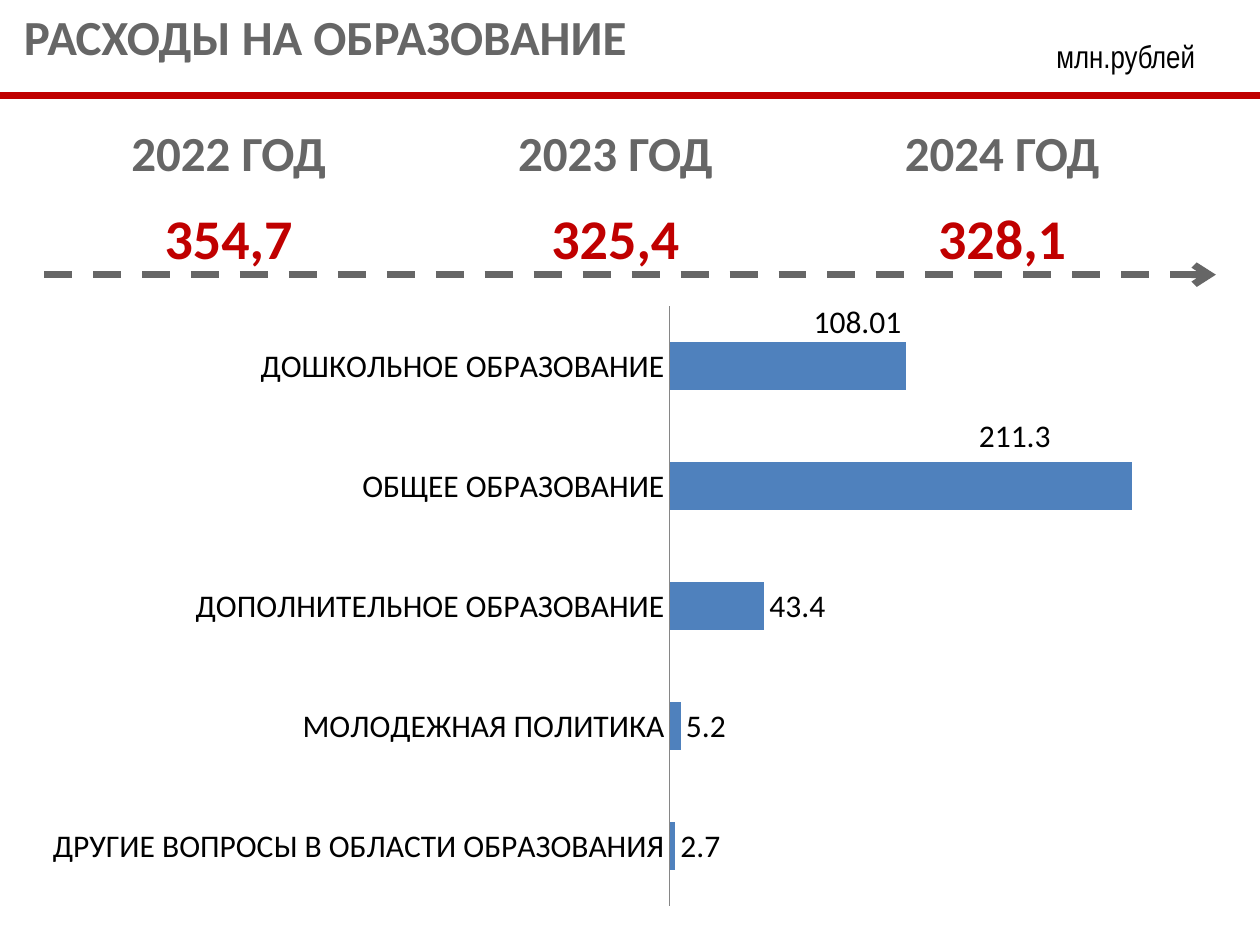
from lxml import etree
from pptx import Presentation
from pptx.chart.data import CategoryChartData as Data
from pptx.dml.color import RGBColor
from pptx.enum.chart import XL_CHART_TYPE as Kind, XL_LABEL_POSITION as Spot
from pptx.enum.chart import XL_TICK_MARK as Tick
from pptx.enum.dml import MSO_LINE as Dash
from pptx.enum.shapes import MSO_CONNECTOR as Link
from pptx.enum.text import MSO_ANCHOR as Anchor, PP_ALIGN as Align
from pptx.oxml import parse_xml
from pptx.oxml.ns import nsdecls, qn
from pptx.util import Inches as In, Pt

GREY, RED, BLUE, BLACK = "666666", "C00000", "4F81BD", "000000"
TITLE = "РАСХОДЫ НА ОБРАЗОВАНИЕ"
UNIT = "млн.рублей"
YEARS = ["2022 ГОД", "2023 ГОД", "2024 ГОД"]
TOTALS = ["354,7", "325,4", "328,1"]
ROWS = [(YEARS, 28, GREY), (TOTALS, 32, RED)]
ITEMS = [
    ("ДРУГИЕ ВОПРОСЫ В ОБЛАСТИ ОБРАЗОВАНИЯ", 2.7),
    ("МОЛОДЕЖНАЯ ПОЛИТИКА", 5.2),
    ("ДОПОЛНИТЕЛЬНОЕ ОБРАЗОВАНИЕ", 43.4),
    ("ОБЩЕЕ ОБРАЗОВАНИЕ", 211.3),
    ("ДОШКОЛЬНОЕ ОБРАЗОВАНИЕ", 108.01),
]
SHIFTS = {3: (-0.13, -0.08), 4: (-0.08, -0.07)}  # label moves, shares of the chart
PLOT = (0.53, 0.02, 0.45, 0.96)
WIDE, RULE, ROW, EDGE = 10, 0.76, 0.71, 0.35


def color(code):
    return RGBColor.from_string(code)


def style(font, size, code, name="Calibri", bold=False):
    font.size, font.name, font.bold = Pt(size), name, bold
    font.color.rgb = color(code)


def write(frame, text, size, code, align, anchor, name="Calibri", bold=True):
    frame.text = text
    frame.word_wrap = True
    frame.vertical_anchor = anchor
    para = frame.paragraphs[0]
    para.alignment = align
    style(para.runs[0].font, size, code, name, bold)


def place(shape, left, top, width, height):
    shape.left, shape.top = In(left), In(top)
    shape.width, shape.height = In(width), In(height)


def draw(slide, left, right, y, code):
    line = slide.shapes.add_connector(Link.STRAIGHT, In(left), In(y), In(right), In(y))
    line.line.color.rgb = color(code)
    line.line.width = Pt(4)
    etree.SubElement(line.line._get_or_add_ln().getparent(), qn("a:effectLst"))
    return line.line


def layout(tags):
    body = "".join(f'<c:{tag} val="{val}"/>' for tag, val in tags)
    return parse_xml(f"<c:layout {nsdecls('c')}><c:manualLayout>{body}"
                     "</c:manualLayout></c:layout>")


def add_totals(slide):
    size = In(0.28), In(RULE), In(9.21), In(2 * ROW)
    table = slide.shapes.add_table(len(ROWS), len(YEARS), *size).table
    table.first_row = table.horz_banding = False
    for r, (texts, size, code) in enumerate(ROWS):
        table.rows[r].height = In(ROW)
        for c, text in enumerate(texts):
            cell = table.cell(r, c)
            cell.fill.background()
            cell.margin_left = cell.margin_right = 0
            cell.margin_top = cell.margin_bottom = 0
            write(cell.text_frame, text, size, code, Align.CENTER, Anchor.BOTTOM)
            cell.vertical_anchor = Anchor.BOTTOM


def add_bars(slide):
    data = Data()
    data.categories = [name for name, _ in ITEMS]
    data.add_series("Series 1", [val for _, val in ITEMS])
    area = In(0.2), In(2.33), In(9.65), In(4.96)
    chart = slide.shapes.add_chart(Kind.BAR_CLUSTERED, *area, data).chart
    chart.has_legend = chart.has_title = False
    style(chart.font, 18, BLACK)

    cats, vals = chart.category_axis, chart.value_axis
    cats.major_tick_mark = cats.minor_tick_mark = Tick.NONE
    cats.format.line.color.rgb = color("868686")
    vals.visible = vals.has_major_gridlines = False
    vals.minimum_scale, vals.maximum_scale = 0, 250

    plot = chart.plots[0]
    plot.gap_width, plot.overlap, plot.vary_by_categories = 150, -25, False
    bars = plot.series[0]
    bars.format.fill.solid()
    bars.format.fill.fore_color.rgb = color(BLUE)
    labels = bars.data_labels
    labels.show_value = True
    labels.position = Spot.OUTSIDE_END
    style(labels.font, 18, BLACK)
    for i, move in SHIFTS.items():
        label = bars.points[i].data_label
        style(label.font, 18, BLACK)
        label.position = Spot.OUTSIDE_END
        for node in bars._element.iter(qn("c:dLbl")):
            idx = node.find(qn("c:idx"))
            if idx.get("val") == str(i):
                idx.addnext(layout(zip("xy", move)))
    for lead in bars._element.iter(qn("c:showLeaderLines")):
        lead.set("val", "0")

    zone = chart._chartSpace.find(".//" + qn("c:plotArea"))
    for old in zone.findall(qn("c:layout")):
        zone.remove(old)
    modes = [("layoutTarget", "inner"), ("xMode", "edge"), ("yMode", "edge")]
    zone.insert(0, layout(modes + list(zip("xywh", PLOT))))


def main():
    deck = Presentation()
    deck.slide_width, deck.slide_height = In(WIDE), In(7.5)
    slide = deck.slides.add_slide(deck.slide_layouts[5])

    unit = slide.shapes.add_textbox(0, 0, 0, 0)
    place(unit, 8.07, 0.29, 1.73, 0.31)
    write(unit.text_frame, UNIT, 18, BLACK, Align.CENTER, Anchor.MIDDLE,
          "Arial Narrow", False)

    title = slide.shapes.title
    place(title, 0, 0, WIDE, 0.57)
    write(title.text_frame, TITLE, 28, GREY, Align.LEFT, Anchor.TOP)
    title.text_frame.margin_left = In(0.19)

    add_totals(slide)
    draw(slide, 0, WIDE, RULE, RED)
    add_bars(slide)
    arrow = draw(slide, EDGE, WIDE - EDGE, RULE + 2 * ROW, GREY)
    arrow.dash_style = Dash.DASH
    etree.SubElement(arrow._get_or_add_ln(), qn("a:tailEnd"), type="arrow")
    deck.save("out.pptx")


if __name__ == "__main__":
    main()
